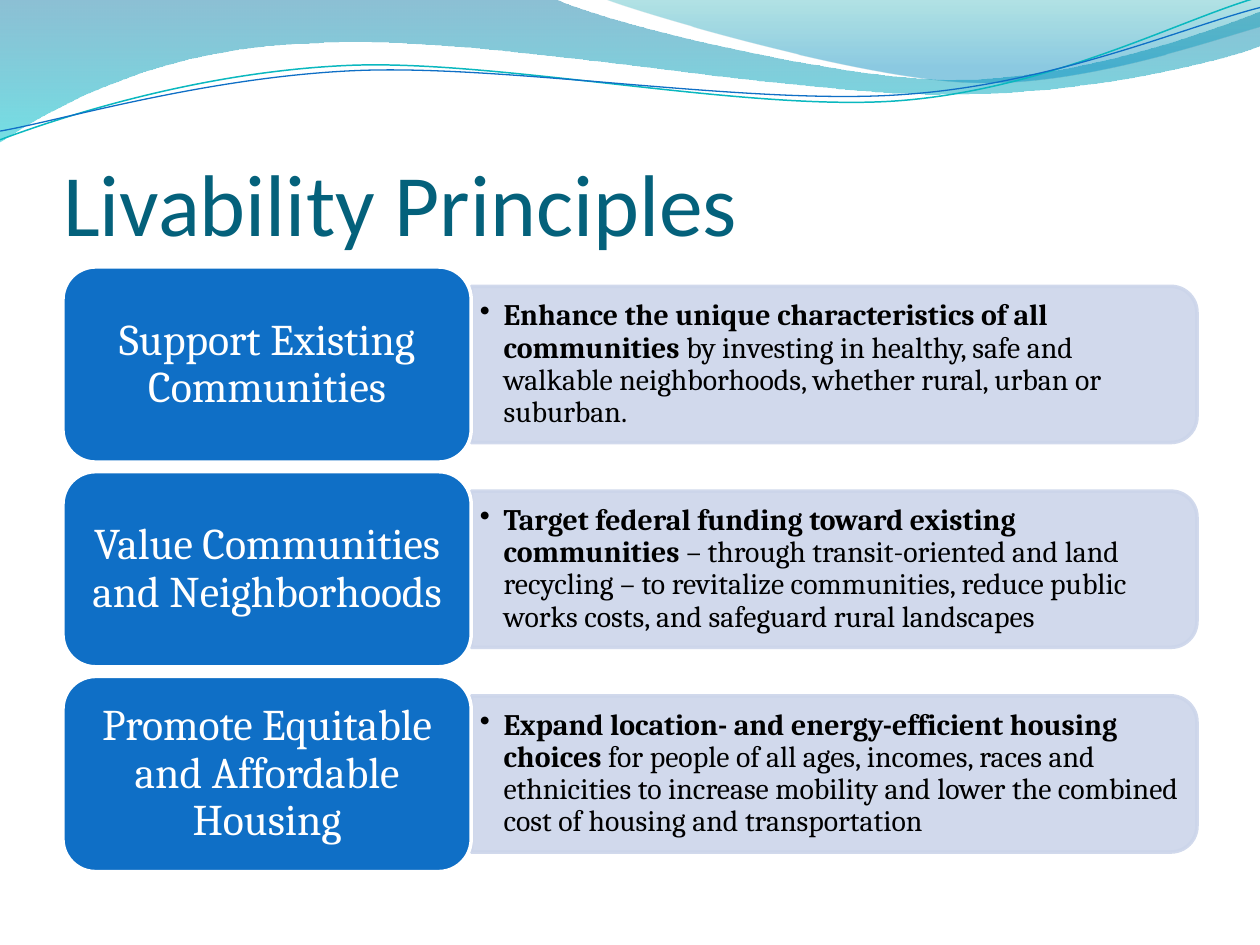
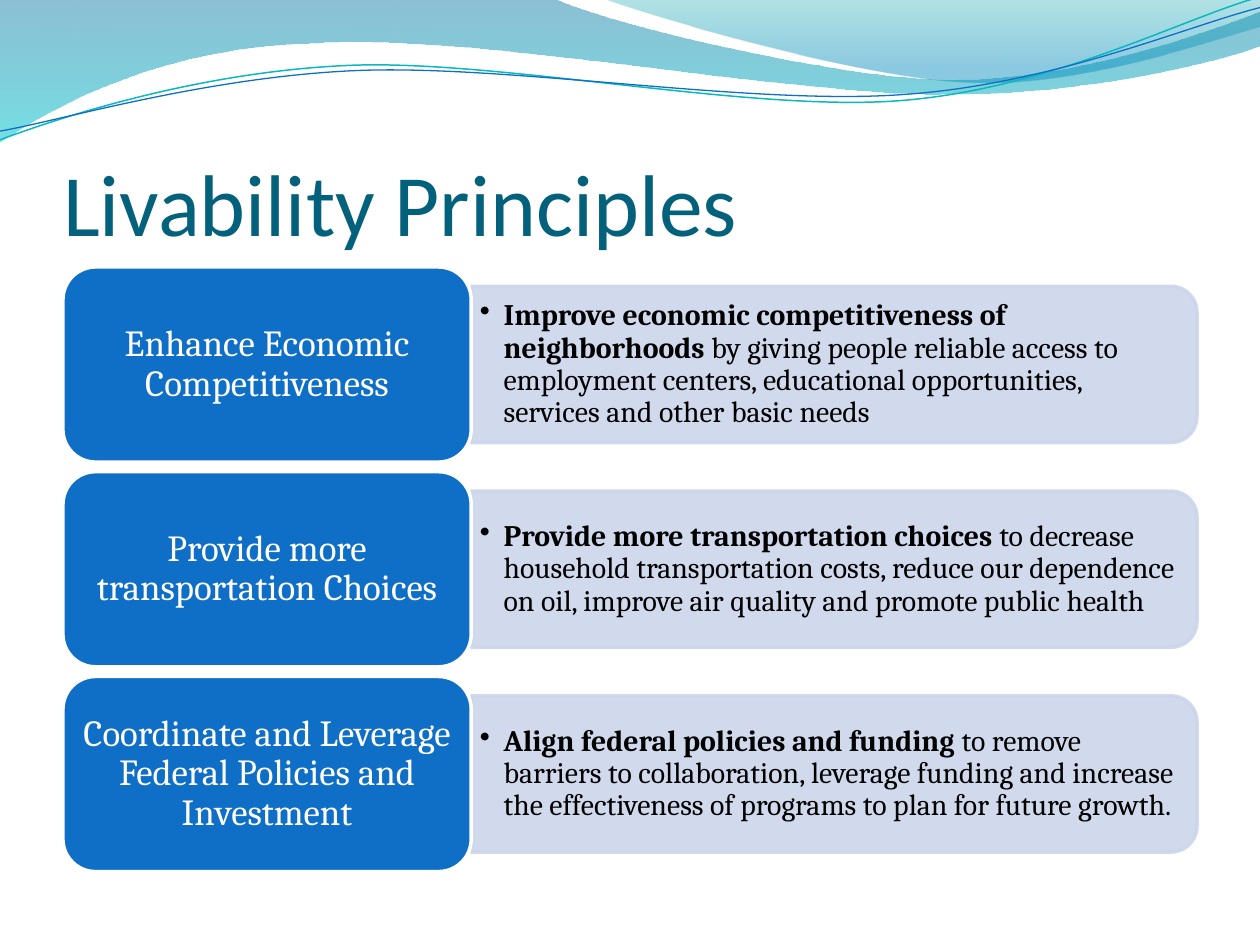
"""Build the two Livability Principles slides."""
from dataclasses import dataclass

from lxml import etree
from pptx import Presentation
from pptx.dml.color import RGBColor
from pptx.enum import shapes, text
from pptx.oxml import ns
from pptx.util import Pt


@dataclass(frozen=True)
class Theme:
    title: str = "04617B"
    label: str = "0F6FC6"
    panel: str = "CCD5EA"
    white: str = "FFFFFF"
    black: str = "000000"
    title_font: str = "Calibri"
    body_font: str = "Cambria"
    title_size: float = 50
    body_size: float = 17
    line_width: float = 2


FIRST_CENTER, ROW_PITCH = 208.3, 117
LABEL_LEFT, LABEL_WIDTH, LABEL_HEIGHT = 36, 233.3, 111.5
PANEL_LEFT, PANEL_WIDTH, PANEL_HEIGHT = 269.3, 414.7, 89.3
TEXT_WIDTH, TEXT_HEIGHT = 410.6, 80.6

WAVE_BANDS = [
    ([(0, 0), (316.8, -0.7),
      (342.7, 12.2, 478, 45.4, 545.8, 45.4),
      (614, 45.4, 689.8, 18.7, 720, 6.5), (720.7, 25.9),
      (707.8, 31.7, 626.4, 54.7, 537, 54),
      (447, 54, 275, 20.2, 185, 24.5),
      (92.9, 25.9, 33, 59.8, -0.7, 81.4)],
     [(0, "0074A1", 45), (1, "00C6CF", 55)]),
    ([(344.9, -0.7),
      (366.5, 7.9, 491, 44.6, 553.7, 46.8),
      (616.3, 49.7, 691.9, 23, 720, 15.1), (720, 0)],
     [(0, "00A1A9", 30), (0.8, "008BBF", 45)]),
]
WAVE_LINES = [
    ([(0, 79.9),
      (34.6, 67, 113.8, 41, 199.4, 37.4),
      (284.4, 33.8, 427, 64.1, 513.4, 57.6),
      (599.8, 51.1, 675.4, 10.8, 718.6, -1.4)], "0AB8BF", 0.85),
    ([(0, 74.9),
      (33.8, 69.1, 118.1, 43.9, 203.8, 40.3),
      (290.2, 36.7, 429.8, 60.5, 516.2, 54),
      (601.9, 48.2, 677.5, 15.1, 720, 4.3)], "0F6FC6", 0.75),
]

SLIDES = [
    (25, [
        ("Support Existing Communities",
         "Enhance the unique characteristics of all communities",
         " by investing in healthy, safe and walkable neighborhoods, "
         "whether rural, urban or suburban."),
        ("Value Communities and Neighborhoods",
         "Target federal funding toward existing communities",
         " – through transit-oriented and land recycling – to revitalize "
         "communities, reduce public works costs, and safeguard rural landscapes"),
        ("Promote Equitable and Affordable Housing",
         "Expand location- and energy-efficient housing choices",
         " for people of all ages, incomes, races and ethnicities to increase "
         "mobility and lower the combined cost of housing and transportation"),
    ]),
    (21, [
        ("Enhance Economic Competitiveness",
         "Improve economic competitiveness of neighborhoods",
         " by giving people reliable access to employment centers, "
         "educational opportunities, services and other basic needs"),
        ("Provide more transportation Choices",
         "Provide more transportation choices",
         " to decrease household transportation costs, reduce our dependence "
         "on oil, improve air quality and promote public health"),
        ("Coordinate and Leverage Federal Policies and Investment",
         "Align federal policies and funding",
         " to remove barriers to collaboration, leverage funding and increase "
         "the effectiveness of programs to plan for future growth."),
    ]),
]


def rgb(value):
    return RGBColor.from_string(value)


def box(*lengths):
    return [Pt(v) for v in lengths]


def set_opacity(shape, percents):
    colors = shape._element.spPr.iter(ns.qn("a:srgbClr"))
    for color, percent in zip(colors, percents):
        etree.SubElement(color, ns.qn("a:alpha"), val=str(percent * 1000))


def bend(sp, steps):
    segments = list(sp._element.iter(ns.qn("a:lnTo")))
    for segment, step in zip(segments, steps):
        if len(step) == 6:
            curve = etree.Element(ns.qn("a:cubicBezTo"))
            for x, y in zip(step[::2], step[1::2]):
                etree.SubElement(curve, ns.qn("a:pt"),
                                 x=str(Pt(x) - sp.left), y=str(Pt(y) - sp.top))
            segment.getparent().replace(segment, curve)


class Deck:
    """Holds the style and the current slide."""

    def __init__(self, prs, theme):
        self.prs, self.theme, self.s = prs, theme, None
        self.layout = prs.slide_layouts[5]

    def new_slide(self, title):
        self.s = self.prs.slides.add_slide(self.layout)
        if len(self.prs.slides) == 1:
            self.waves()
        self.title(title)

    def waves(self):
        waves = [self.wave_band(*band) for band in WAVE_BANDS]
        waves += [self.wave_line(*line) for line in WAVE_LINES]
        tree = self.layout.shapes._spTree
        for i, sp in enumerate(waves):
            sp._element.nvSpPr.cNvPr.set("id", str(100 + i))
            tree.insert(2 + i, sp._element)

    def title(self, words):
        sp = self.s.shapes.title
        sp.left, sp.top, sp.width, sp.height = box(36, 55.4, 648, 90)
        tf = sp.text_frame
        tf.text = words
        self.frame(tf, (0, 3.6, 0, 0), text.MSO_ANCHOR.BOTTOM)
        p = tf.paragraphs[0]
        p.alignment = text.PP_ALIGN.LEFT
        t = self.theme
        self.font(p.runs[0], t.title_font, t.title_size, t.title)

    def frame(self, tf, insets, anchor=text.MSO_ANCHOR.MIDDLE):
        tf.word_wrap = True
        tf.auto_size = text.MSO_AUTO_SIZE.NONE
        tf.vertical_anchor = anchor
        (tf.margin_left, tf.margin_top,
         tf.margin_right, tf.margin_bottom) = box(*insets)

    def font(self, r, name, size, color, bold=False):
        r.font.name, r.font.size, r.font.bold = name, Pt(size), bold
        r.font.color.rgb = rgb(color)

    def outline(self, steps, close):
        start, *rest = [box(*step[-2:]) for step in steps]
        builder = self.s.shapes.build_freeform(*start)
        builder.add_line_segments(rest, close=close)
        sp = builder.convert_to_shape()
        bend(sp, steps[1:])
        sp.shadow.inherit = False
        return sp

    def wave_band(self, steps, stops):
        sp = self.outline(steps, True)
        sp.line.fill.background()
        sp.fill.gradient()
        sp.fill.gradient_angle = 270
        for stop, (position, color, _) in zip(sp.fill.gradient_stops, stops):
            stop.position = position
            stop.color.rgb = rgb(color)
        set_opacity(sp, [opacity for _, _, opacity in stops])
        return sp

    def wave_line(self, steps, color, width):
        sp = self.outline(steps, False)
        sp.fill.background()
        sp.line.color.rgb = rgb(color)
        sp.line.width = Pt(width)
        return sp

    def shape(self, kind, bounds, fill, line):
        sp = self.s.shapes.add_shape(kind, *box(*bounds))
        sp.shadow.inherit = False
        sp.fill.solid()
        sp.fill.fore_color.rgb = rgb(fill)
        sp.line.color.rgb = rgb(line)
        sp.line.width = Pt(self.theme.line_width)
        return sp

    def panel(self, center):
        left = PANEL_LEFT + (PANEL_WIDTH - PANEL_HEIGHT) / 2
        sp = self.shape(shapes.MSO_SHAPE.ROUND_2_SAME_RECTANGLE,
                        (left, center - PANEL_WIDTH / 2, PANEL_HEIGHT, PANEL_WIDTH),
                        self.theme.panel, self.theme.panel)
        sp.rotation = 90
        set_opacity(sp, (90, 90))

    def bullet(self, center, lead, rest):
        tf = self.s.shapes.add_textbox(*box(
            PANEL_LEFT, center - TEXT_HEIGHT / 2, TEXT_WIDTH, TEXT_HEIGHT)).text_frame
        self.frame(tf, (5, 2.5, 5, 2.5))
        p = tf.paragraphs[0]
        p.level = 1
        p.line_spacing = 0.9
        pPr = p._p.get_or_add_pPr()
        pPr.set("marL", str(Pt(13.5)))
        pPr.set("indent", str(Pt(-13.5)))
        etree.SubElement(pPr, ns.qn("a:buChar"), char="••")
        t = self.theme
        for words, bold in ((lead, True), (rest, False)):
            r = p.add_run()
            r.text = words
            self.font(r, t.body_font, t.body_size, t.black, bold)

    def label(self, center, words, size):
        t = self.theme
        sp = self.shape(shapes.MSO_SHAPE.ROUNDED_RECTANGLE,
                        (LABEL_LEFT, center - LABEL_HEIGHT / 2, LABEL_WIDTH, LABEL_HEIGHT),
                        t.label, t.white)
        tf = sp.text_frame
        tf.text = words
        self.frame(tf, (5.5, 3, 5.5, 3))
        p = tf.paragraphs[0]
        p.alignment = text.PP_ALIGN.CENTER
        p.line_spacing = 0.9
        self.font(p.runs[0], t.body_font, size, t.white)


def main():
    prs = Presentation()
    prs.slide_width, prs.slide_height = Pt(720), Pt(540)
    deck = Deck(prs, Theme())
    for label_size, principles in SLIDES:
        deck.new_slide("Livability Principles")
        for row, (name, lead, rest) in enumerate(principles):
            center = FIRST_CENTER + row * ROW_PITCH
            deck.panel(center)
            deck.bullet(center, lead, rest)
            deck.label(center, name, label_size)
    prs.save("out.pptx")


if __name__ == "__main__":
    main()
